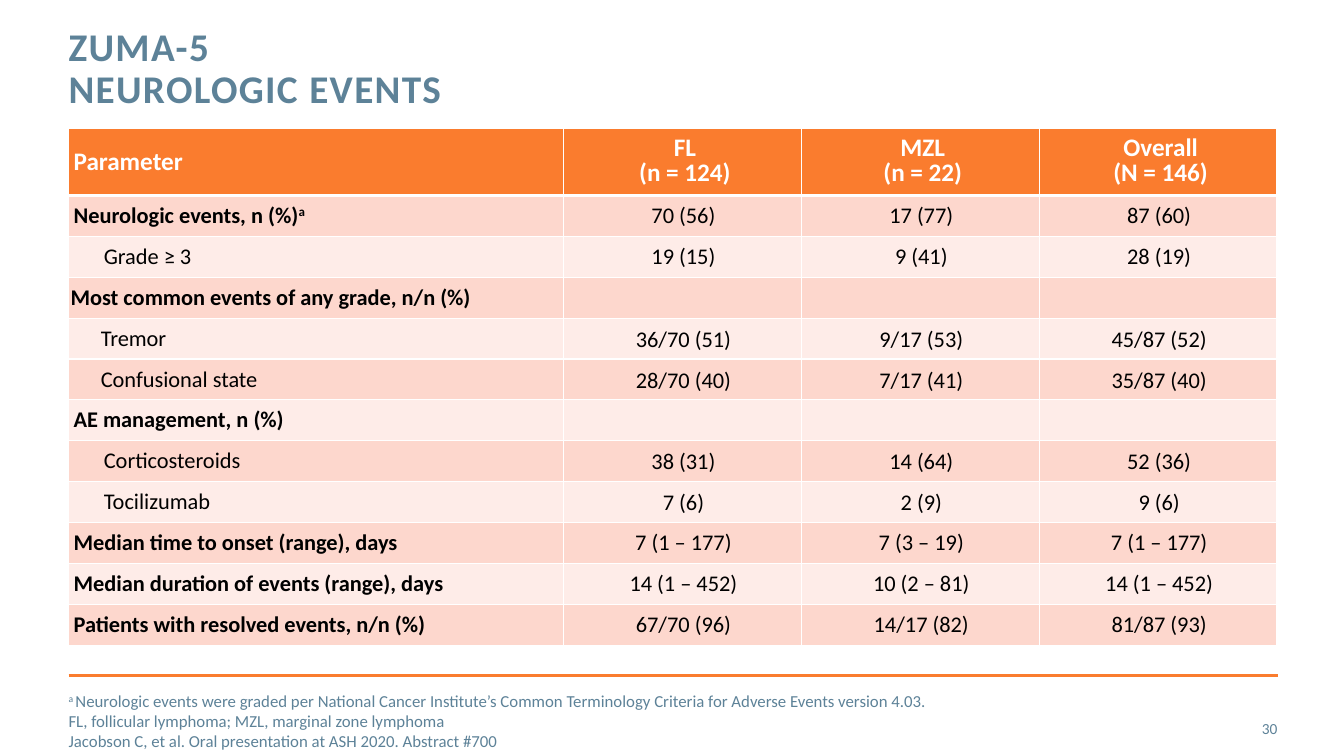
from copy import deepcopy

from lxml import etree
from pptx import Presentation
from pptx.dml.color import RGBColor
from pptx.enum.shapes import MSO_CONNECTOR
from pptx.enum.text import MSO_ANCHOR, MSO_AUTO_SIZE, PP_ALIGN
from pptx.oxml.ns import qn
from pptx.util import Inches, Pt

LEFT, CENTER, RIGHT = PP_ALIGN.LEFT, PP_ALIGN.CENTER, PP_ALIGN.RIGHT
TOP, MIDDLE = MSO_ANCHOR.TOP, MSO_ANCHOR.MIDDLE
STRAIGHT = MSO_CONNECTOR.STRAIGHT
NO_AUTOFIT = MSO_AUTO_SIZE.NONE
SECTION_LAYOUT = 2

ORANGE, SLATE, WHITE, BLACK = "FA7C2E", "5D8298", "FFFFFF", "000000"
BANDS = ("FDD7CD", "FEECE8")

# Positions are in hundredths of the slide's width and height.
GRID = 100
MARGIN, CONTENT_WIDTH = 5.1, 90
COLUMN_WIDTHS = (36.83, 17.7, 17.7, 17.7)
HEADER_HEIGHT, ROW_HEIGHT = 8.93, 5.41

HEADER = ("Parameter", "FL\n(n = 124)", "MZL\n(n = 22)", "Overall\n(N = 146)")
WIDE, NARROW = 0.05, 0.02
# Label, is it a heading, label inset, line spacing of the values, values
ROWS = (
    ("Neurologic events, n (%)^a", True, WIDE, 1, ("70 (56)", "17 (77)", "87 (60)")),
    ("Grade ≥ 3", False, WIDE, 1, ("19 (15)", "9 (41)", "28 (19)")),
    ("Most common events of any grade, n/n (%)", True, NARROW, 1, ("", "", "")),
    ("Tremor", False, NARROW, 1.07, ("36/70 (51)", "9/17 (53)", "45/87 (52)")),
    ("Confusional state", False, NARROW, 1.07,
     ("28/70 (40)", "7/17 (41)", "35/87 (40)")),
    ("AE management, n (%)", True, WIDE, 1, ("", "", "")),
    ("Corticosteroids", False, WIDE, 1.07, ("38 (31)", "14 (64)", "52 (36)")),
    ("Tocilizumab", False, WIDE, 1.07, ("7 (6)", "2 (9)", "9 (6)")),
    ("Median time to onset (range), days", True, WIDE, 1,
     ("7 (1 – 177)", "7 (3 – 19)", "7 (1 – 177)")),
    ("Median duration of events (range), days", True, WIDE, 1,
     ("14 (1 – 452)", "10 (2 – 81)", "14 (1 – 452)")),
    ("Patients with resolved events, n/n (%)", True, WIDE, 1,
     ("67/70 (96)", "14/17 (82)", "81/87 (93)")),
)
FOOTNOTE = (
    "^a ^Neurologic events were graded per National Cancer Institute’s "
    "Common Terminology Criteria for Adverse Events version 4.03.\n"
    "FL, follicular lymphoma; MZL, marginal zone lymphoma\n"
    "Jacobson C, et al. Oral presentation at ASH 2020. Abstract #700"
)


def rgb(code):
    return RGBColor.from_string(code)


def assign(target, **values):
    for name, value in values.items():
        setattr(target, name, value)


class SlideBuilder:
    font_name = "Calibri"

    def __init__(self, presentation):
        self.width = presentation.slide_width
        self.height = presentation.slide_height
        self.slide = presentation.slides.add_slide(
            presentation.slide_layouts[SECTION_LAYOUT])

    def x(self, columns):
        return round(self.width * columns / GRID)

    def y(self, rows):
        return round(self.height * rows / GRID)

    def box(self, left, top, width, height):
        return self.x(left), self.y(top), self.x(width), self.y(height)

    def fill_paragraph(self, paragraph, text, size, color, bold=False, tracking=0,
                       **layout):
        """A caret switches superscript on and off; a newline breaks the line."""
        assign(paragraph, space_before=Pt(0), **layout)
        for line_number, line in enumerate(text.split("\n")):
            if line_number:
                paragraph.add_line_break()
            for part_number, part in enumerate(line.split("^")):
                if not part:
                    continue
                run = paragraph.add_run()
                run.text = part
                assign(run.font, name=self.font_name, size=Pt(size), bold=bold)
                run.font.color.rgb = rgb(color)
                properties = run._r.get_or_add_rPr()
                if tracking:
                    properties.set("spc", str(tracking * 100))
                if part_number % 2:
                    properties.set("baseline", "30000")
        for line_break in paragraph._p.findall(qn("a:br")):
            line_break.append(deepcopy(properties))

    def text(self, holder, area, text, anchor, size, bold=False, **style):
        for name, value in zip(("left", "top", "width", "height"), self.box(*area)):
            setattr(holder, name, value)
        frame = holder.text_frame
        assign(frame, margin_left=0, margin_top=0, margin_right=0, margin_bottom=0,
               word_wrap=True, auto_size=NO_AUTOFIT, vertical_anchor=anchor)
        self.fill_paragraph(frame.paragraphs[0], text, size, SLATE, bold, **style)

    def title(self, area, text):
        self.text(self.slide.shapes.title, area, text, TOP, 28, True,
                  tracking=1, alignment=LEFT, line_spacing=Pt(30))

    def footnote(self, area, text):
        self.text(self.slide.placeholders[1], area, text, MIDDLE, 12, alignment=LEFT)

    def page_number(self, area, text):
        holder = self.slide.shapes.add_textbox(*self.box(*area))
        self.text(holder, area, text, MIDDLE, 11, alignment=RIGHT)

    def rule(self, left, right, row):
        rule = self.slide.shapes.add_connector(
            STRAIGHT, self.x(left), self.y(row), self.x(right), self.y(row))
        rule.line.color.rgb = rgb(ORANGE)
        rule.line.width = Pt(2)
        etree.SubElement(rule._element.spPr, qn("a:effectLst"))

    def borders(self, cell, top=1, bottom=1):
        properties = cell._tc.get_or_add_tcPr()
        for side, width in (("L", 1), ("R", 1), ("T", top), ("B", bottom)):
            line = etree.SubElement(properties, qn(f"a:ln{side}"), w=str(Pt(width)))
            fill = etree.SubElement(line, qn("a:solidFill"))
            etree.SubElement(fill, qn("a:srgbClr"), val=WHITE)

    def cell(self, cell, text, fill, inset, size, color, bold, top=1, bottom=1, **layout):
        self.borders(cell, top, bottom)
        cell.fill.solid()
        cell.fill.fore_color.rgb = rgb(fill)
        assign(cell, margin_left=Inches(inset), margin_right=0, margin_top=0,
               margin_bottom=0, vertical_anchor=MIDDLE)
        frame = cell.text_frame
        for number, line in enumerate(text.split("\n")):
            paragraph = frame.add_paragraph() if number else frame.paragraphs[0]
            self.fill_paragraph(paragraph, line, size, color, bold, **layout)

    def table(self, left, top, header, rows):
        height = HEADER_HEIGHT + ROW_HEIGHT * len(rows)
        table = self.slide.shapes.add_table(
            len(rows) + 1, len(header),
            *self.box(left, top, sum(COLUMN_WIDTHS), height)).table
        for column, width in zip(table.columns, COLUMN_WIDTHS):
            column.width = self.x(width)
        for number, row in enumerate(table.rows):
            row.height = self.y(ROW_HEIGHT if number else HEADER_HEIGHT)
        for column, heading in enumerate(header):
            self.cell(table.cell(0, column), heading, ORANGE, WIDE, 18, WHITE, True,
                      bottom=3, alignment=CENTER if column else LEFT,
                      line_spacing=0.8 if column else 0.9)
        for number, (label, heading, inset, spacing, values) in enumerate(rows, 1):
            band = BANDS[(number - 1) % 2]
            top_line = 3 if number == 1 else 1
            label_cell = table.cell(number, 0)
            self.cell(label_cell, label, band, inset, 16, BLACK, heading,
                      top=top_line, alignment=LEFT)
            if not heading:
                indent = label_cell.text_frame.paragraphs[0]._p.get_or_add_pPr()
                indent.set("marL", str(Inches(0.3)))
            for column, value in enumerate(values, 1):
                self.cell(table.cell(number, column), value, band, NARROW, 16, BLACK,
                          False, top=top_line, alignment=CENTER, line_spacing=spacing)


def main():
    presentation = Presentation()
    assign(presentation, slide_width=Inches(13.33), slide_height=Inches(7.5))
    builder = SlideBuilder(presentation)
    builder.rule(MARGIN, MARGIN + CONTENT_WIDTH, 89.33)
    builder.table(MARGIN, 16.93, HEADER, ROWS)
    builder.title((MARGIN, 3.6, 71.7, 11.73), "ZUMA-5\nNEUROLOGIC EVENTS")
    builder.page_number((88.6, 93.73, 6.45, 5.33), "30")
    builder.footnote((MARGIN, 92.67, 66.6, 5.33), FOOTNOTE)
    presentation.save("out.pptx")


if __name__ == "__main__":
    main()
